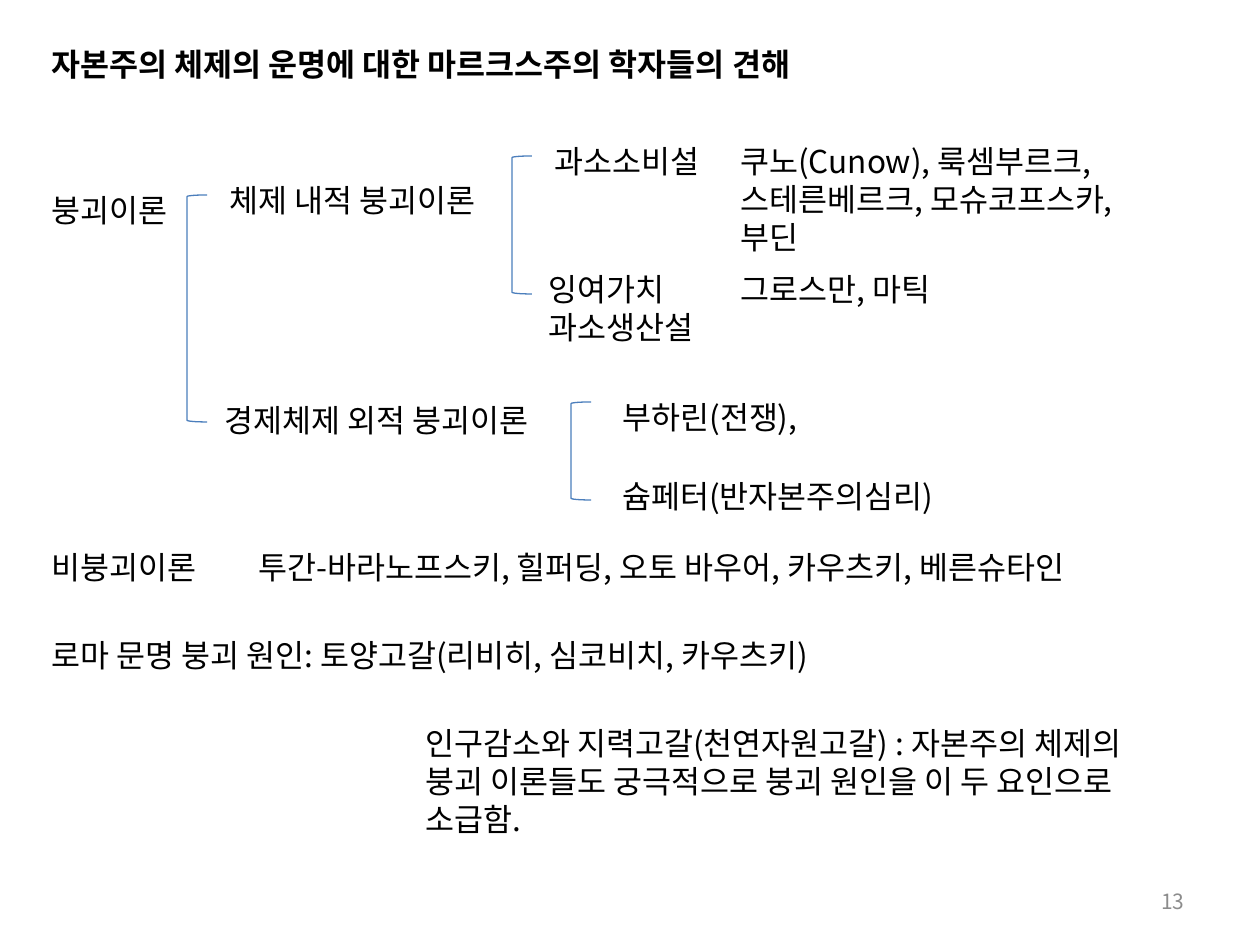
from pptx import Presentation
from pptx.dml.color import RGBColor
from pptx.enum.shapes import MSO_SHAPE as SHAPE
from pptx.enum.text import MSO_ANCHOR as ANCHOR, MSO_AUTO_SIZE as AUTO, PP_ALIGN as ALIGN
from pptx.oxml.ns import qn
from pptx.util import Pt
from lxml.etree import SubElement

EMU_PER_PX = 914400 / 126
COLORS = {"text": "000000", "bracket": "4B7EBC", "number": "8C8C8C"}
FONT = "Noto Sans CJK KR"
LINE_H = 50
MARGIN, NAMES_X, OUTER_X = 39, 728, 610


def px(n):
    return round(n * EMU_PER_PX)


def rgb(name):
    return RGBColor.from_string(COLORS[name])


def write(tf, text, size=18, color="text", bold=False, align=ALIGN.LEFT, anchor=ANCHOR.TOP):
    tf.word_wrap = True
    tf.auto_size = AUTO.NONE
    tf.vertical_anchor = anchor
    p = tf.paragraphs[0]
    p.alignment = align
    r = p.add_run()
    r.text = text
    r.font.size = Pt(size)
    r.font.bold = bold
    r.font.name = FONT
    r.font.color.rgb = rgb(color)
    SubElement(r.font._element, qn("a:ea"), typeface=FONT)


class Page:
    """Draws in px on one slide."""

    def __init__(self, prs):
        self.slide = prs.slides.add_slide(prs.slide_layouts[5])
        self.shapes = self.slide.shapes

    def title(self, text, x, y, w, h=LINE_H):
        sp = self.shapes.title
        sp.left, sp.top, sp.width, sp.height = map(px, (x, y, w, h))
        write(sp.text_frame, text, bold=True)

    def text(self, text, x, y, w, h=LINE_H, **style):
        sp = self.shapes.add_textbox(*map(px, (x, y, w, h)))
        write(sp.text_frame, text, **style)

    def bracket(self, x, y, h, w=20):
        sp = self.shapes.add_shape(SHAPE.LEFT_BRACKET, *map(px, (x, y, w, h)))
        sp.shadow.inherit = False
        sp.fill.background()
        sp.line.color.rgb = rgb("bracket")
        sp.line.width = Pt(0.75)


def main():
    prs = Presentation()
    prs.slide_width, prs.slide_height = px(1260), px(945)
    page = Page(prs)
    page.title("자본주의 체제의 운명에 대한 마르크스주의 학자들의 견해", MARGIN, 39, 1053)

    # Collapse theories, branching left to right
    page.text("붕괴이론", MARGIN, 185, 335)
    page.bracket(187, 195, 227)
    page.text("체제 내적 붕괴이론", 217, 175, 561)
    page.text("경제체제 외적 붕괴이론", 212, 395, 423)

    page.bracket(512, 156, 138)
    page.text("과소소비설", 542, 136, 186)
    page.text("쿠노(Cunow), 룩셈부르크, 스테른베르크, 모슈코프스카, 부딘", NAMES_X, 136, 462, 89)
    page.text("잉여가치 과소생산설", 536, 264, 186, 89)
    page.text("그로스만, 마틱", NAMES_X, 264, 444)

    page.bracket(571, 402, 98)
    page.text("부하린(전쟁),", OUTER_X, 392, 394)
    page.text("슘페터(반자본주의심리)", OUTER_X, 471, 493)

    # Non-collapse theories and the Roman comparison
    page.text("비붕괴이론", MARGIN, 542, 207)
    page.text("투간-바라노프스키, 힐퍼딩, 오토 바우어, 카우츠키, 베른슈타인", 246, 542, 989)
    page.text("로마 문명 붕괴 원인: 토양고갈(리비히, 심코비치, 카우츠키)", MARGIN, 630, 1182)
    page.text("인구감소와 지력고갈(천연자원고갈) : 자본주의 체제의 붕괴 이론들도 "
              "궁극적으로 붕괴 원인을 이 두 요인으로 소급함.", 413, 718, 759, 127)

    page.text("13", 903, 876, 294, size=12, color="number",
              align=ALIGN.RIGHT, anchor=ANCHOR.MIDDLE)
    prs.save("out.pptx")


if __name__ == "__main__":
    main()
